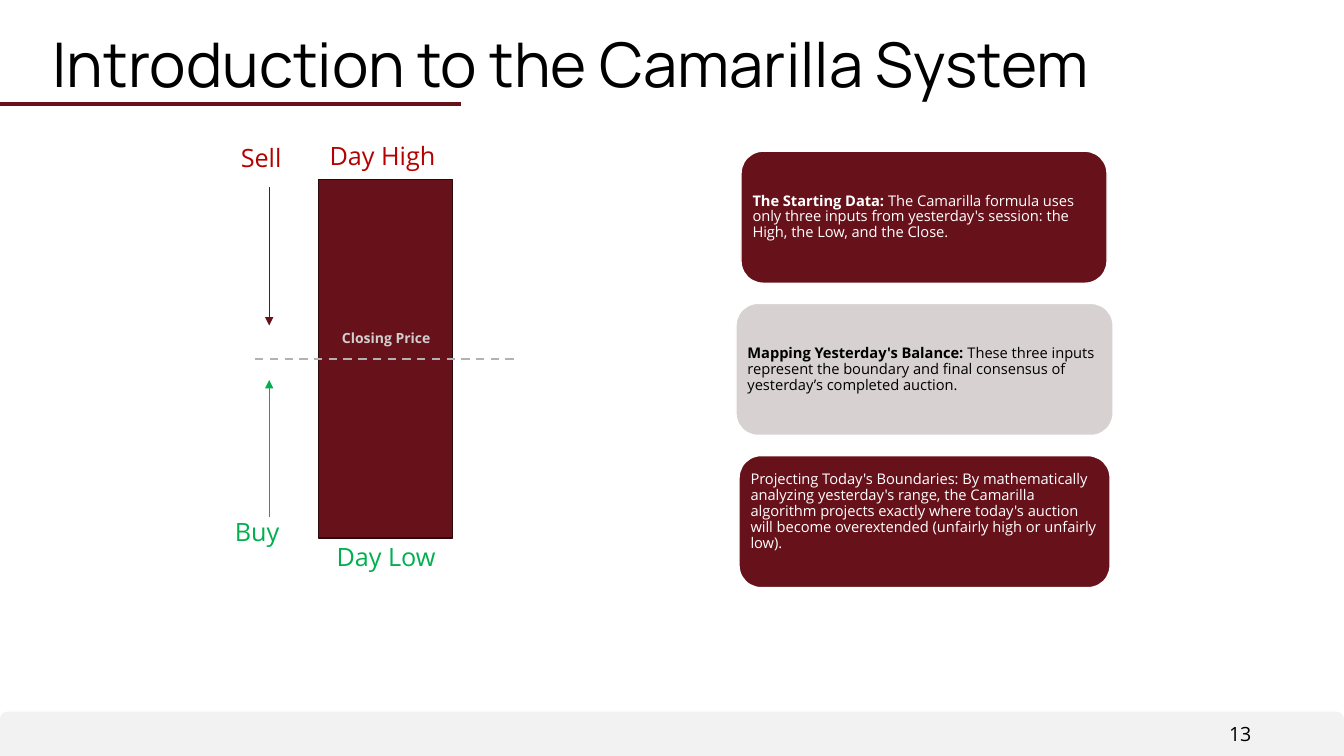
from lxml import etree
from pptx import Presentation
from pptx.dml.color import RGBColor
from pptx.enum.dml import MSO_LINE
from pptx.enum.shapes import MSO_CONNECTOR, MSO_SHAPE
from pptx.enum.text import MSO_ANCHOR, PP_ALIGN
from pptx.oxml.ns import qn
from pptx.util import Inches, Pt

MAROON = RGBColor(0x67, 0x12, 0x1B)
DARK_MAROON = RGBColor(0x2D, 0x08, 0x0C)
RED = RGBColor(0xB4, 0x00, 0x00)
GREEN = RGBColor(0x00, 0xB0, 0x50)
DASH_GRAY = RGBColor(0xB2, 0xB2, 0xB2)
LABEL_GRAY = RGBColor(0xD0, 0xCE, 0xCE)
CARD_GRAY = RGBColor(0xD7, 0xD1, 0xD1)
FOOTER_GRAY = RGBColor(0xF2, 0xF2, 0xF2)
WHITE = RGBColor(0xFF, 0xFF, 0xFF)
BLACK = RGBColor(0x00, 0x00, 0x00)

presentation = Presentation()
presentation.slide_width = Inches(13.33)
presentation.slide_height = Inches(7.5)
slide = presentation.slides.add_slide(presentation.slide_layouts[5])


def add_filled_shape(preset, left, top, width, height, fill, outline=None):
    shape = slide.shapes.add_shape(
        preset, Inches(left), Inches(top), Inches(width), Inches(height)
    )
    shape.shadow.inherit = False
    shape.fill.solid()
    shape.fill.fore_color.rgb = fill
    if outline is None:
        shape.line.fill.background()
    else:
        shape.line.color.rgb = outline
        shape.line.width = Pt(1)
    return shape


def add_line(start_x, start_y, end_x, end_y, color, width):
    line = slide.shapes.add_connector(
        MSO_CONNECTOR.STRAIGHT,
        Inches(start_x), Inches(start_y), Inches(end_x), Inches(end_y),
    )
    line.line.color.rgb = color
    line.line.width = Pt(width)
    etree.SubElement(line._element.spPr, qn("a:effectLst"))
    return line


add_filled_shape(MSO_SHAPE.ROUND_2_SAME_RECTANGLE, 0, 7.06, 13.33, 0.44, FOOTER_GRAY)
add_line(0, 1.03, 4.57, 1.03, MAROON, 3)

title = slide.shapes.title
title.left, title.top = Inches(0.45), Inches(0.2)
title.width, title.height = Inches(12.42), Inches(0.84)
title.text_frame.text = "Introduction to the Camarilla System"
title.text_frame.vertical_anchor = MSO_ANCHOR.BOTTOM
title.text_frame.margin_left = title.text_frame.margin_right = Inches(0.07)
title.text_frame.margin_top = title.text_frame.margin_bottom = Inches(0.04)
paragraph = title.text_frame.paragraphs[0]
paragraph.alignment = PP_ALIGN.LEFT
paragraph.line_spacing = 0.9
paragraph.font.name = "Manrope"
paragraph.font.size = Pt(44)
paragraph.font.color.rgb = BLACK

add_filled_shape(MSO_SHAPE.RECTANGLE, 3.16, 1.78, 1.33, 3.56, MAROON, DARK_MAROON)
closing_line = add_line(2.53, 3.56, 5.12, 3.56, DASH_GRAY, 1.5)
closing_line.line.dash_style = MSO_LINE.DASH

for start_y, end_y, color in [(5.13, 3.77, GREEN), (1.86, 3.23, MAROON)]:
    arrow = add_line(2.67, start_y, 2.67, end_y, color, 0.5)
    etree.SubElement(arrow.line._get_or_add_ln(), qn("a:tailEnd"), type="triangle")

labels = [
    ("Closing Price", 2.89, 3.22, 1.88, 0.27, 10, LABEL_GRAY, PP_ALIGN.CENTER),
    ("Sell", 2.29, 1.36, 0.77, 0.49, 18, RED, PP_ALIGN.LEFT),
    ("Buy", 2.23, 5.07, 0.82, 0.49, 18, GREEN, PP_ALIGN.LEFT),
    ("Day High", 3.17, 1.34, 1.26, 0.4, 18, RED, PP_ALIGN.LEFT),
    ("Day Low", 3.24, 5.32, 1.19, 0.4, 18, GREEN, PP_ALIGN.LEFT),
    ("13", 10.82, 7.11, 1.69, 0.34, 14, BLACK, PP_ALIGN.RIGHT),
]
for text, left, top, width, height, size, color, alignment in labels:
    label = slide.shapes.add_textbox(
        Inches(left), Inches(top), Inches(width), Inches(height)
    )
    label.text_frame.text = text
    label.text_frame.word_wrap = alignment != PP_ALIGN.LEFT
    paragraph = label.text_frame.paragraphs[0]
    paragraph.alignment = alignment
    paragraph.font.name = "Open Sans"
    paragraph.font.size = Pt(size)
    paragraph.font.bold = text == "Closing Price"
    paragraph.font.color.rgb = color

cards = [
    (7.35, 3.63, MAROON, WHITE, 0.05, "The Starting Data:",
     " The Camarilla formula uses only three inputs from yesterday's session: "
     "the High, the Low, and the Close."),
    (7.3, 3.74, CARD_GRAY, BLACK, 0.05, "Mapping Yesterday's Balance:",
     " These three inputs represent the boundary and final consensus of "
     "yesterday’s completed auction."),
    (7.33, 3.68, MAROON, WHITE, 0.25, "",
     "Projecting Today's Boundaries: By mathematically analyzing yesterday's "
     "range, the Camarilla algorithm projects exactly where today's auction "
     "will become overextended (unfairly high or unfairly low)."),
]
for index, (left, width, fill, color, bottom_margin, heading, body) in enumerate(cards):
    card = add_filled_shape(
        MSO_SHAPE.ROUNDED_RECTANGLE, left, 1.5 + index * 1.51, width, 1.31, fill, WHITE
    )
    frame = card.text_frame
    frame.word_wrap = True
    frame.vertical_anchor = MSO_ANCHOR.MIDDLE
    frame.margin_left = frame.margin_right = frame.margin_top = Inches(0.05)
    frame.margin_bottom = Inches(bottom_margin)
    paragraph = frame.paragraphs[0]
    paragraph.alignment = PP_ALIGN.LEFT
    paragraph.line_spacing = 0.9
    paragraph.font.name = "Open Sans"
    paragraph.font.size = Pt(10.5)
    paragraph.font.color.rgb = color
    if heading:
        run = paragraph.add_run()
        run.text = heading
        run.font.bold = True
    paragraph.add_run().text = body

presentation.save("out.pptx")
